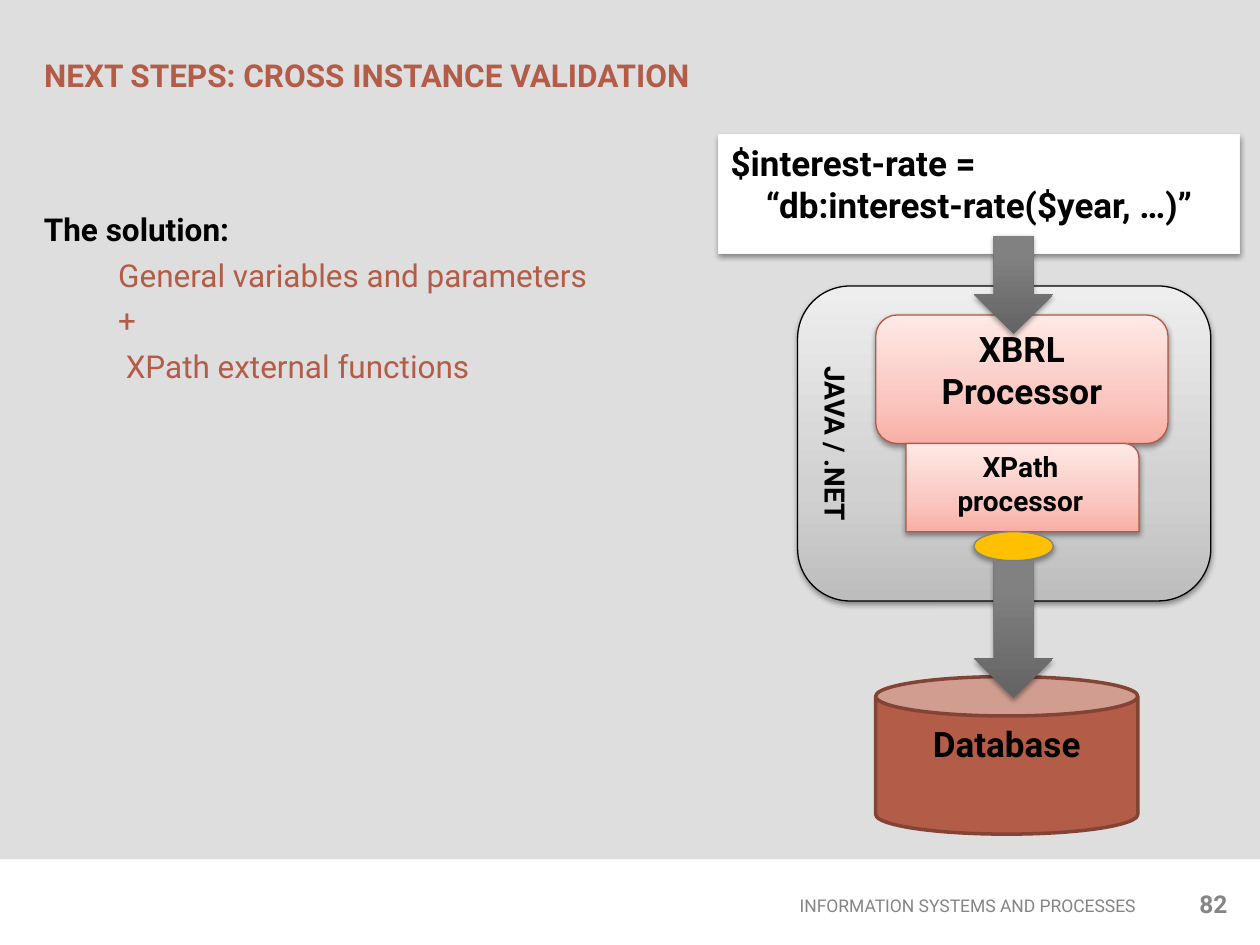
import lxml.etree
import pptx
import pptx.dml.color
import pptx.enum.shapes
import pptx.enum.text
import pptx.oxml
import pptx.oxml.ns
import pptx.util
from dataclasses import dataclass

Inches = pptx.util.Inches
Pt = pptx.util.Pt
SHAPE = pptx.enum.shapes.MSO_SHAPE
ALIGN = pptx.enum.text.PP_ALIGN
ANCHOR = pptx.enum.text.MSO_ANCHOR
qn = pptx.oxml.ns.qn


@dataclass(frozen=True)
class Theme:
    font: str = "Roboto"
    ink: str = "000000"
    white: str = "FFFFFF"
    panel: str = "DEDEDE"
    accent: str = "B35C48"
    accent_edge: str = "844435"
    muted: str = "858585"
    formula_edge: str = "F9F9F9"
    processor_edge: str = "B25844"
    port: str = "FFC000"
    port_edge: str = "828282"
    gray: tuple = ((0, "BDBDBD"), (35, "D1D1D1"), (100, "EEEEEE"))
    pink: tuple = ((0, "F9AFA5"), (35, "FAC7C0"), (100, "FEE9E6"))
    arrow: tuple = ((0, "636363"), (80, "818181"), (100, "818181"))
    footer: int = 10
    number: int = 14
    small: int = 16
    body: int = 18
    large: int = 20


T = Theme()


def add_text(p, text, size, color=T.ink, bold=True, align=ALIGN.LEFT):
    p.alignment = align
    r = p.add_run()
    r.text = text
    r.font.name = T.font
    r.font.size = Pt(size)
    r.font.bold = bold
    r.font.color.rgb = pptx.dml.color.RGBColor.from_string(color)


def add_block(s, kind, box, fill, line=None, width=0.75, shadow=True):
    sp = s.shapes.add_shape(kind, *map(Inches, box))
    sp.shadow.inherit = False
    if isinstance(fill, str):
        sp.fill.solid()
        sp.fill.fore_color.rgb = pptx.dml.color.RGBColor.from_string(fill)
    else:
        sp.fill.gradient()
        grad = sp._element.spPr.find(qn("a:gradFill"))
        stops = grad.find(qn("a:gsLst"))
        for stop in list(stops):
            stops.remove(stop)
        for position, color in fill:
            stop = lxml.etree.SubElement(stops, qn("a:gs"), pos=str(position * 1000))
            lxml.etree.SubElement(stop, qn("a:srgbClr"), val=color)
        grad.find(qn("a:lin")).set("ang", str(270 * 60000))
    if line:
        sp.line.color.rgb = pptx.dml.color.RGBColor.from_string(line)
        sp.line.width = Pt(width)
    else:
        sp.line.fill.background()
    if shadow:
        effects = sp._element.spPr.find(qn("a:effectLst"))
        outer = lxml.etree.SubElement(
            effects, qn("a:outerShdw"), blurRad=str(Pt(3.1)), dist=str(Pt(1.6)),
            dir=str(90 * 60000), rotWithShape="0")
        color = lxml.etree.SubElement(outer, qn("a:srgbClr"), val=T.ink)
        lxml.etree.SubElement(color, qn("a:alpha"), val="38000")
    sp.text_frame.word_wrap = True
    sp.text_frame.vertical_anchor = ANCHOR.TOP
    return sp


prs = pptx.Presentation()
prs.slide_width = Inches(10)
prs.slide_height = Inches(7.5)
s = prs.slides.add_slide(prs.slide_layouts[5])

add_block(s, SHAPE.RECTANGLE, (0, 0, 10, 6.82), T.panel, shadow=False)

title = s.shapes.title
title.left, title.top, title.width, title.height = map(Inches, (0.25, 0.12, 6.48, 0.95))
s.shapes._spTree.append(title._element)
tf = title.text_frame
tf.auto_size = pptx.enum.text.MSO_AUTO_SIZE.NONE
tf.vertical_anchor = ANCHOR.MIDDLE
add_text(tf.paragraphs[0], "NEXT STEPS: CROSS INSTANCE VALIDATION", T.body, T.accent)

solution = s.shapes.add_textbox(*map(Inches, (0.25, 1.62, 4.6, 4.99)))
tf = solution.text_frame
tf.word_wrap = True
for i, (text, indent, color) in enumerate((
    ("The solution:", 0, T.ink),
    ("General variables and parameters", 0.59, T.accent),
    ("+", 0.59, T.accent),
    ("XPath external functions", 0.65, T.accent),
)):
    p = tf.add_paragraph() if i else tf.paragraphs[0]
    p.line_spacing = Pt(21.6)
    p.space_after = Pt(4.4)
    p._p.get_or_add_pPr().set("marL", str(Inches(indent)))
    add_text(p, text, T.body, color, bold=i == 0)

for box, text, size, bold in (
    ((3.08, 7.05, 6.03, 0.27), "INFORMATION SYSTEMS AND PROCESSES", T.footer, False),
    ((9.27, 7, 0.57, 0.35), "82", T.number, True),
):
    tf = s.shapes.add_textbox(*map(Inches, box)).text_frame
    tf.word_wrap = True
    tf.vertical_anchor = ANCHOR.MIDDLE
    add_text(tf.paragraphs[0], text, size, T.muted, bold, ALIGN.RIGHT)

database = add_block(s, SHAPE.CAN, (6.95, 5.37, 2.08, 1.25), T.accent, T.accent_edge, 2, False)
add_text(database.text_frame.paragraphs[0], "Database", T.large, align=ALIGN.CENTER)

formula = add_block(s, SHAPE.RECTANGLE, (5.7, 1.07, 4.14, 0.94), T.white, T.formula_edge)
tf = formula.text_frame
add_text(tf.paragraphs[0], "$interest-rate =", T.large)
p = tf.add_paragraph()
p._p.get_or_add_pPr().set("marL", str(Inches(0.28)))
add_text(p, "“db:interest-rate($year, …)”", T.large)

platform = add_block(s, SHAPE.ROUNDED_RECTANGLE, (6.33, 2.27, 3.28, 2.5), T.gray, T.ink)
tf = platform.text_frame
tf.vertical_anchor = ANCHOR.BOTTOM
tf._txBody.bodyPr.set("vert", "vert")
add_text(tf.paragraphs[0], "JAVA / .NET", T.small, align=ALIGN.CENTER)

for kind, box, text, size in (
    (SHAPE.ROUNDED_RECTANGLE, (6.95, 2.5, 2.32, 1.02), "XBRL Processor", T.large),
    (SHAPE.ROUND_1_RECTANGLE, (7.19, 3.52, 1.85, 0.7), "XPath processor", T.small),
):
    processor = add_block(s, kind, box, T.pink, T.processor_edge)
    add_text(processor.text_frame.paragraphs[0], text, size, align=ALIGN.CENTER)

add_block(s, SHAPE.OVAL, (7.73, 4.22, 0.63, 0.23), T.port, T.port_edge)
for top, height in ((1.87, 0.78), (4.45, 1.09)):
    add_block(s, SHAPE.DOWN_ARROW, (7.73, top, 0.63, height), T.arrow)

prs.save("out.pptx")
